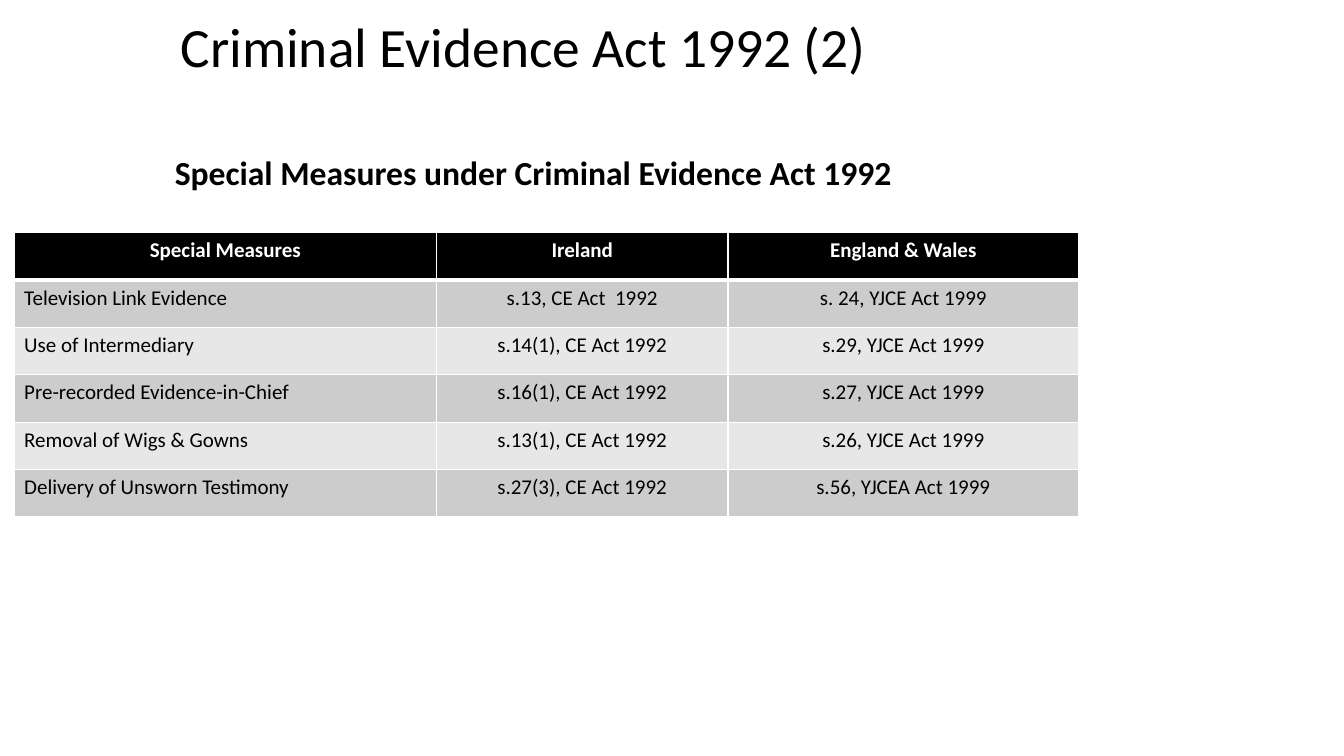
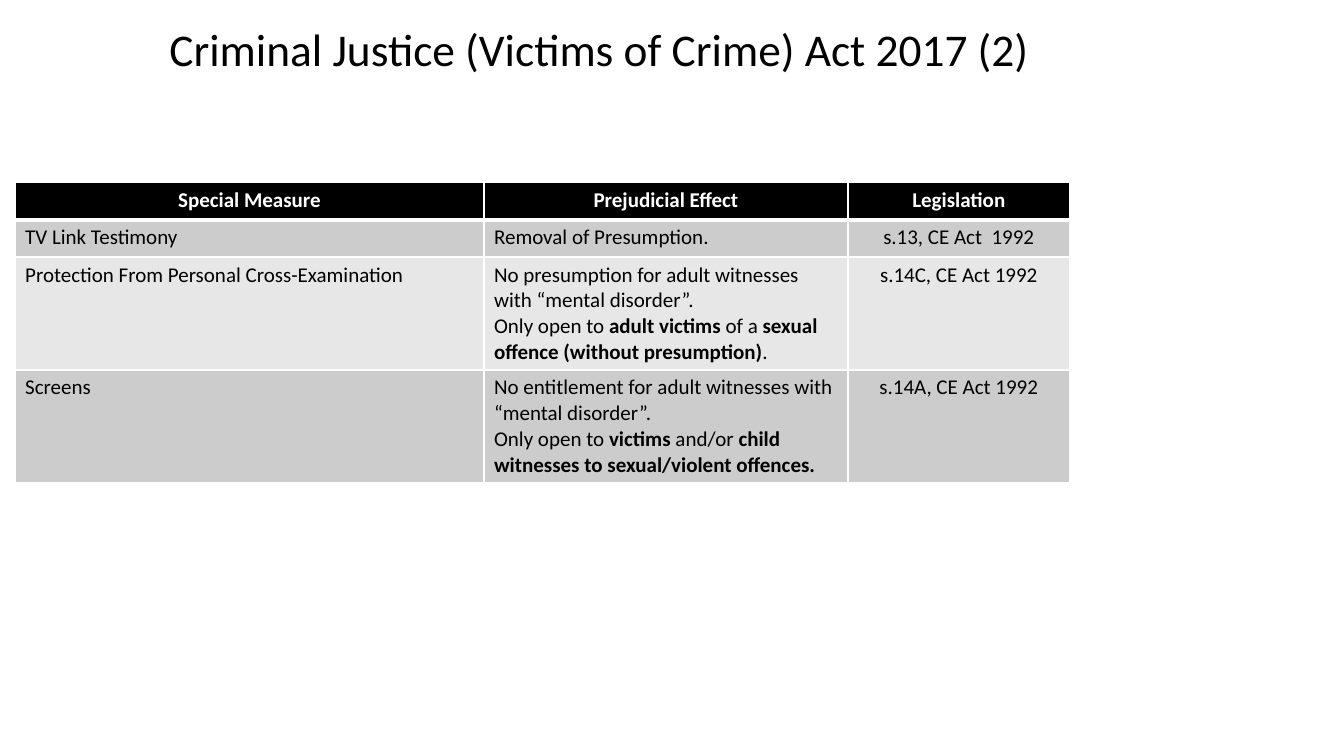
from lxml import etree
from pptx import Presentation
from pptx import util as u
from pptx.dml.color import RGBColor
from pptx.enum import text
from pptx.oxml import ns

FONT = "Calibri"
COLOURS = {
    "ink": "000000",
    "paper": "FFFFFF",
    "header": "000000",
    "odd_row": "CCCCCC",
    "even_row": "E7E7E7",
}
LEFT, CENTRE = text.PP_ALIGN.LEFT, text.PP_ALIGN.CENTER
TITLE_WIDTH, TITLE_HEIGHT = 9.74, 0.84


def colour(name):
    return RGBColor.from_string(COLOURS[name])


def style_font(font, size, ink, bold=False):
    font.name = FONT
    font.size = u.Pt(size)
    font.bold = bold
    font.color.rgb = colour(ink)


def add_title(slide, wording, left, top, size):
    title = slide.shapes.title
    title.left, title.top = u.Inches(left), u.Inches(top)
    title.width, title.height = u.Inches(TITLE_WIDTH), u.Inches(TITLE_HEIGHT)
    frame = title.text_frame
    frame.text = wording
    frame.auto_size = text.MSO_AUTO_SIZE.NONE
    frame.vertical_anchor = text.MSO_ANCHOR.MIDDLE
    line = frame.paragraphs[0]
    line.alignment = LEFT
    line.line_spacing = 0.9
    style_font(line.runs[0].font, size, "ink")


def add_caption(slide, wording, left, top, width, height):
    caption = slide.shapes.add_textbox(*map(u.Inches, (left, top, width, height)))
    frame = caption.text_frame
    frame.word_wrap = True
    frame.text = wording
    line = frame.paragraphs[0]
    line.alignment = CENTRE
    style_font(line.runs[0].font, 24, "ink", bold=True)


def add_borders(cell, row):
    properties = cell._tc.get_or_add_tcPr()
    widths = {"L": 1, "R": 1, "T": 3 if row == 1 else 1, "B": 3 if row == 0 else 1}
    for side, points in widths.items():
        border = etree.SubElement(properties, ns.qn(f"a:ln{side}"), w=str(u.Pt(points)))
        fill = etree.SubElement(border, ns.qn("a:solidFill"))
        etree.SubElement(fill, ns.qn("a:srgbClr"), val=COLOURS["paper"])


def fill_cell(cell, wording, row, alignment):
    header = row == 0
    add_borders(cell, row)
    cell.fill.solid()
    band = "header" if header else "odd_row" if row % 2 else "even_row"
    cell.fill.fore_color.rgb = colour(band)
    frame = cell.text_frame
    for number, sentence in enumerate(wording.split("\n")):
        line = frame.add_paragraph() if number else frame.paragraphs[0]
        line.alignment = CENTRE if header else alignment
        for part, piece in enumerate(sentence.split("**")):
            if piece:
                run = line.add_run()
                run.text = piece
                style_font(run.font, 15, "paper" if header else "ink",
                           bold=header or part % 2 == 1)


def add_measures_table(slide, left, top, widths, heights, alignments, rows):
    box = map(u.Inches, (left, top, sum(widths), sum(heights)))
    table = slide.shapes.add_table(len(rows), len(widths), *box).table
    for column, width in zip(table.columns, widths):
        column.width = u.Inches(width)
    for number, (height, wordings) in enumerate(zip(heights, rows)):
        table.rows[number].height = u.Inches(height)
        for column, wording in enumerate(wordings):
            fill_cell(table.cell(number, column), wording, number, alignments[column])


def evidence_act_slide(slide):
    rows = [
        ("Special Measures", "Ireland", "England & Wales"),
        ("Television Link Evidence", "s.13, CE Act  1992", "s. 24, YJCE Act 1999"),
        ("Use of Intermediary", "s.14(1), CE Act 1992", "s.29, YJCE Act 1999"),
        ("Pre-recorded Evidence-in-Chief", "s.16(1), CE Act 1992", "s.27, YJCE Act 1999"),
        ("Removal of Wigs & Gowns", "s.13(1), CE Act 1992", "s.26, YJCE Act 1999"),
        ("Delivery of Unsworn Testimony", "s.27(3), CE Act 1992", "s.56, YJCEA Act 1999"),
    ]
    add_title(slide, "Criminal Evidence Act 1992 (2)", 1.69, 0.07, 39.6)
    add_measures_table(slide, 0.14, 2.31, (4.19, 2.89, 3.48), [0.47] * len(rows),
                       (LEFT, CENTRE, CENTRE), rows)
    add_caption(slide, "Special Measures under Criminal Evidence Act 1992",
                0.43, 1.46, 9.72, 0.61)


def victims_act_slide(slide):
    rows = [
        ("Special Measure", "Prejudicial Effect", "Legislation"),
        ("TV Link Testimony", "Removal of Presumption.", "s.13, CE Act  1992"),
        ("Protection From Personal Cross-Examination",
         "No presumption for adult witnesses with “mental disorder”.\n"
         "Only open to **adult victims **of a **sexual offence (without presumption)**.",
         "s.14C, CE Act 1992"),
        ("Screens",
         "No entitlement for adult witnesses with “mental disorder”.\n"
         "Only open to **victims** and/or **child witnesses to sexual/violent offences.**",
         "s.14A, CE Act 1992"),
    ]
    add_title(slide, "Criminal Justice (Victims of Crime) Act 2017 (2)", 1.58, 0.09, 32.4)
    add_measures_table(slide, 0.15, 1.81, (4.65, 3.61, 2.2), (0.37, 0.37, 1.12, 1.12),
                       (LEFT, LEFT, CENTRE), rows)


def main():
    deck = Presentation()
    deck.slide_width, deck.slide_height = u.Inches(13.33), u.Inches(7.5)
    title_only = deck.slide_layouts[5]
    for build in (evidence_act_slide, victims_act_slide):
        build(deck.slides.add_slide(title_only))
    deck.save("out.pptx")


if __name__ == "__main__":
    main()
